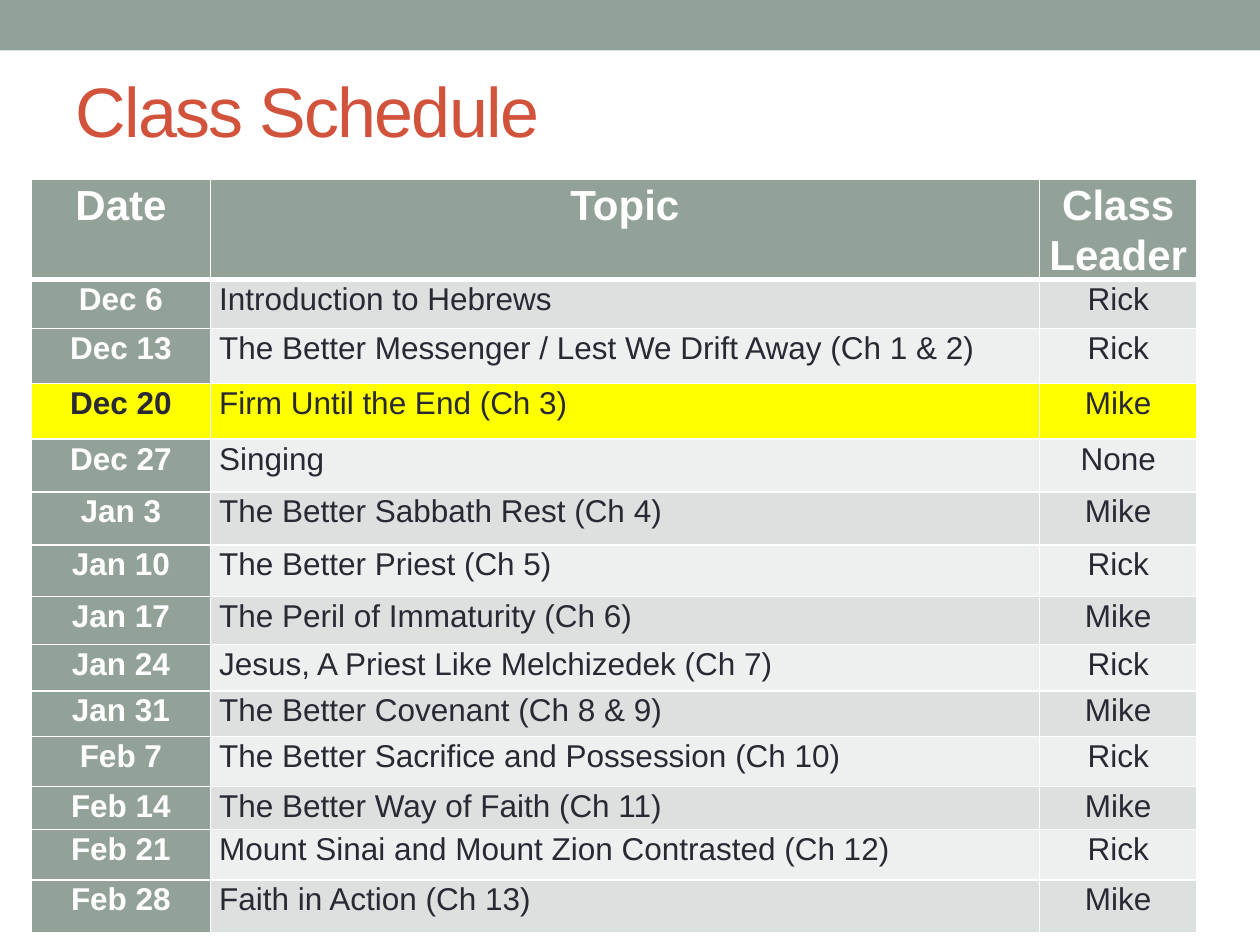
import pptx
import pptx.util
import pptx.dml.color
import pptx.enum.shapes
import pptx.enum.text
import pptx.oxml
import pptx.oxml.ns

Inches = pptx.util.Inches
Pt = pptx.util.Pt
ALIGN = pptx.enum.text.PP_ALIGN
ANCHOR = pptx.enum.text.MSO_ANCHOR
SAGE, WHITE, DARK, YELLOW = "93A299", "FFFFFF", "292934", "FFFF00"
BANDS = ["EEF0EF", "DCE0DE"]


def color(code):
    return pptx.dml.color.RGBColor.from_string(code)


def border(cell, side, width):
    props = cell._tc.get_or_add_tcPr()
    props.append(pptx.oxml.parse_xml(
        f'<a:{side} {pptx.oxml.ns.nsdecls("a")} w="{Pt(width)}">'
        f'<a:solidFill><a:srgbClr val="{WHITE}"/></a:solidFill></a:{side}>'))


deck = pptx.Presentation()
deck.slide_width = Inches(10)
deck.slide_height = Inches(7.5)
slide = deck.slides.add_slide(deck.slide_layouts[5])

band = slide.shapes.add_shape(
    pptx.enum.shapes.MSO_SHAPE.RECTANGLE, 0, 0, Inches(10), Inches(0.4))
band.shadow.inherit = False
band.fill.solid()
band.fill.fore_color.rgb = color(SAGE)
band.line.fill.background()

title = slide.shapes.title
title.left, title.top = Inches(0.5), Inches(0.33)
title.width, title.height = Inches(9), Inches(1.08)
frame = title.text_frame
frame.text = "Class Schedule"
frame.auto_size = pptx.enum.text.MSO_AUTO_SIZE.NONE
frame.vertical_anchor = ANCHOR.MIDDLE
frame.paragraphs[0].alignment = ALIGN.LEFT
run = frame.paragraphs[0].runs[0]
run.font.name = "Arial"
run.font.size = Pt(40)
run.font.color.rgb = color("D2533C")
run.font._element.set("spc", "-100")

rows = [
    ("Date", "Topic", "Class Leader", 0.61),
    ("Dec 6", "Introduction to Hebrews", "Rick", 0.39),
    ("Dec 13", "The Better Messenger / Lest We Drift Away (Ch 1 & 2)", "Rick", 0.44),
    ("Dec 20", "Firm Until the End (Ch 3)", "Mike", 0.44),
    ("Dec 27", "Singing", "None", 0.42),
    ("Jan 3", "The Better Sabbath Rest (Ch 4)", "Mike", 0.42),
    ("Jan 10", "The Better Priest (Ch 5)", "Rick", 0.41),
    ("Jan 17", "The Peril of Immaturity (Ch 6)", "Mike", 0.38),
    ("Jan 24", "Jesus, A Priest Like Melchizedek (Ch 7)", "Rick", 0.37),
    ("Jan 31", "The Better Covenant (Ch 8 & 9)", "Mike", 0.36),
    ("Feb 7", "The Better Sacrifice and Possession (Ch 10)", "Rick", 0.4),
    ("Feb 14", "The Better Way of Faith (Ch 11)", "Mike", 0.34),
    ("Feb 21", "Mount Sinai and Mount Zion Contrasted (Ch 12)", "Rick", 0.4),
    ("Feb 28", "Faith in Action (Ch 13)", "Mike", 0.42),
]
table = slide.shapes.add_table(
    len(rows), 3, Inches(0.25), Inches(1.42), Inches(9.25), Inches(6.03)).table
table.first_col = True
for col, width in zip(table.columns, [1.42, 6.58, 1.25]):
    col.width = Inches(width)

for r, (*words, height) in enumerate(rows):
    table.rows[r].height = Inches(height)
    for c, word in enumerate(words):
        cell = table.cell(r, c)
        head = r == 0 or c == 0
        marked = words[0] == "Dec 20"
        cell.margin_left = cell.margin_right = Inches(0.07)
        cell.margin_top = cell.margin_bottom = 0
        border(cell, "lnL", 1)
        border(cell, "lnR", 1)
        border(cell, "lnT", 3 if r == 1 else 1)
        border(cell, "lnB", 3 if r == 0 else 1)
        cell.fill.solid()
        cell.fill.fore_color.rgb = color(
            YELLOW if marked else SAGE if head else BANDS[r % 2])
        cell.text_frame.text = word
        para = cell.text_frame.paragraphs[0]
        para.alignment = ALIGN.LEFT if c == 1 and r else ALIGN.CENTER
        para.line_spacing = 1.07
        font = para.runs[0].font
        font.name = "Arial"
        font.size = Pt(18 if r else 24)
        font.bold = head
        font.color.rgb = color(WHITE if head and not marked else DARK)

deck.save("out.pptx")
